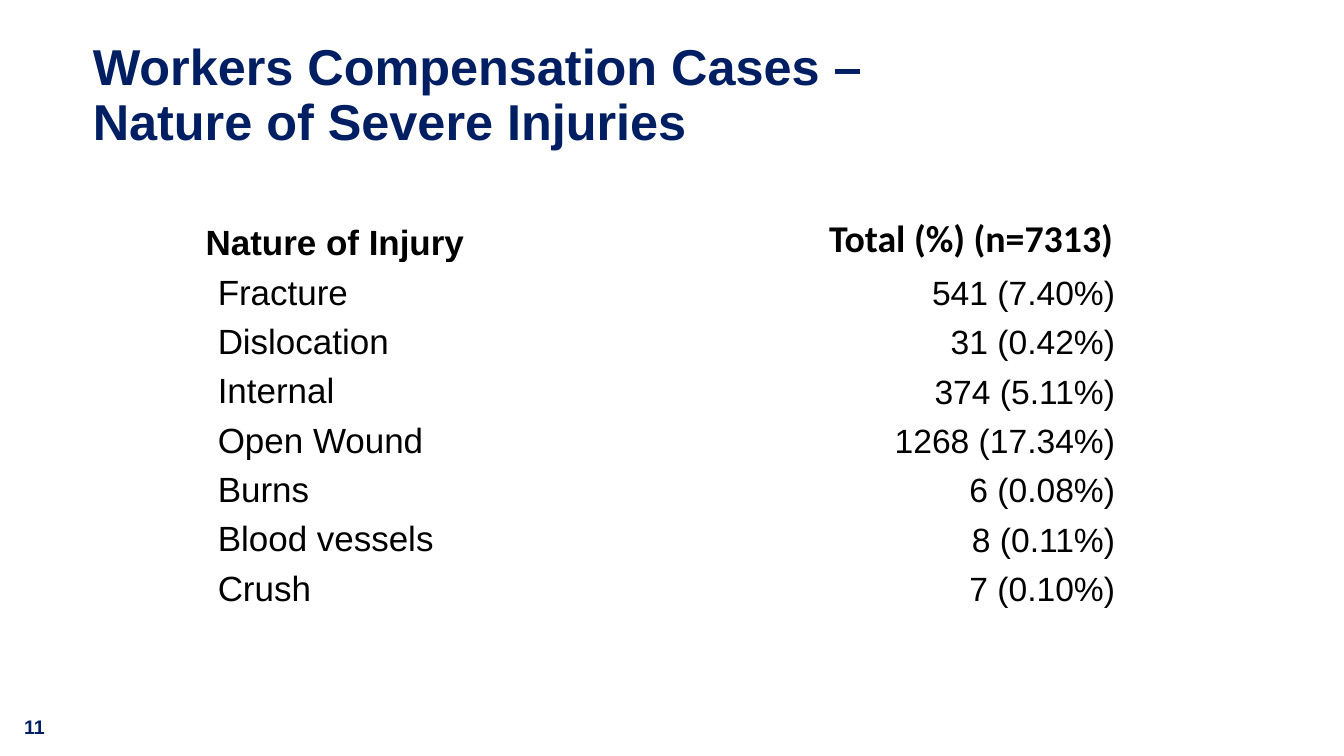
from dataclasses import dataclass

import pptx
import pptx.dml.color
import pptx.enum.text
import pptx.util

Inches = pptx.util.Inches
Align = pptx.enum.text.PP_ALIGN
Anchor = pptx.enum.text.MSO_ANCHOR


@dataclass(frozen=True)
class Theme:
    title_color: str = "001E62"
    number_color: str = "001E61"
    text_color: str = "000000"
    body_font: str = "Arial"
    total_font: str = "Calibri"
    title_size: int = 36
    label_size: int = 25
    total_header_size: int = 27
    value_size: int = 24
    number_size: int = 14


INJURIES = [
    ("Fracture", "541 (7.40%)"),
    ("Dislocation", "31 (0.42%)"),
    ("Internal", "374 (5.11%)"),
    ("Open Wound", "1268 (17.34%)"),
    ("Burns", "6 (0.08%)"),
    ("Blood vessels", "8 (0.11%)"),
    ("Crush", "7 (0.10%)"),
]


class InjurySlide:
    def __init__(self, presentation, theme):
        self.theme = theme
        self.slide = presentation.slides.add_slide(presentation.slide_layouts[5])

    def add_run(self, paragraph, text, size, color, bold=False, font=None):
        run = paragraph.add_run()
        run.text = text
        run.font.name = font or self.theme.body_font
        run.font.size = pptx.util.Pt(size)
        run.font.bold = bold
        run.font.color.rgb = pptx.dml.color.RGBColor.from_string(color)

    def set_insets(self, holder, left, top, right, bottom):
        """Set the margins of a text frame or a table cell."""
        holder.margin_left, holder.margin_top = Inches(left), Inches(top)
        holder.margin_right, holder.margin_bottom = Inches(right), Inches(bottom)

    def set_title(self, lines):
        title = self.slide.shapes.title
        title.left, title.top = Inches(0.92), Inches(0.37)
        title.width, title.height = Inches(11.49), Inches(1.18)
        frame = title.text_frame
        frame.word_wrap = True
        frame.auto_size = pptx.enum.text.MSO_AUTO_SIZE.NONE
        frame.vertical_anchor = Anchor.MIDDLE
        self.set_insets(frame, 0, 0, 0, 0)
        paragraph = frame.paragraphs[0]
        paragraph.alignment = Align.LEFT
        paragraph.line_spacing = 0.9
        for index, line in enumerate(lines):
            if index:
                paragraph.add_line_break()
            self.add_run(paragraph, line, self.theme.title_size,
                         self.theme.title_color, bold=True)

    def add_page_number(self, number):
        box = self.slide.shapes.add_textbox(
            Inches(0.14), Inches(7.04), Inches(0.66), Inches(0.34))
        box.text_frame.word_wrap = True
        self.add_run(box.text_frame.paragraphs[0], number, self.theme.number_size,
                     self.theme.number_color, bold=True)

    def fill_cell(self, cell, text, size, insets, align, bold=False, font=None):
        cell.fill.background()
        cell.vertical_anchor = Anchor.BOTTOM
        self.set_insets(cell, *insets)
        paragraph = cell.text_frame.paragraphs[0]
        paragraph.alignment = align
        self.add_run(paragraph, text, size, self.theme.text_color, bold, font)

    def add_injury_table(self, headers, injuries):
        theme = self.theme
        table = self.slide.shapes.add_table(
            len(injuries) + 1, len(headers),
            Inches(2.01), Inches(2.08), Inches(9.06), Inches(3.96)).table
        table.first_row = table.horz_banding = False
        for column, width in zip(table.columns, (4.12, 4.94)):
            column.width = Inches(width)
        for index, row in enumerate(table.rows):
            row.height = Inches(0.49 if index else 0.53)

        header_insets = (0.03, 0.03, 0.03, 0)
        self.fill_cell(table.cell(0, 0), headers[0], theme.label_size,
                       header_insets, Align.LEFT, bold=True)
        self.fill_cell(table.cell(0, 1), headers[1], theme.total_header_size,
                       header_insets, Align.RIGHT, bold=True, font=theme.total_font)
        for index, (injury, total) in enumerate(injuries, start=1):
            self.fill_cell(table.cell(index, 0), injury, theme.label_size,
                           (0.15, 0.03, 0.03, 0), Align.LEFT)
            self.fill_cell(table.cell(index, 1), total, theme.value_size,
                           (0.01, 0.01, 0.01, 0), Align.RIGHT)


def main():
    presentation = pptx.Presentation()
    presentation.slide_width = Inches(13.33)
    presentation.slide_height = Inches(7.5)
    page = InjurySlide(presentation, Theme())
    page.add_page_number("11")
    page.set_title(["Workers Compensation Cases –", "Nature of Severe Injuries"])
    page.add_injury_table(("Nature of Injury", "Total (%) (n=7313)"), INJURIES)
    presentation.save("out.pptx")


if __name__ == "__main__":
    main()
